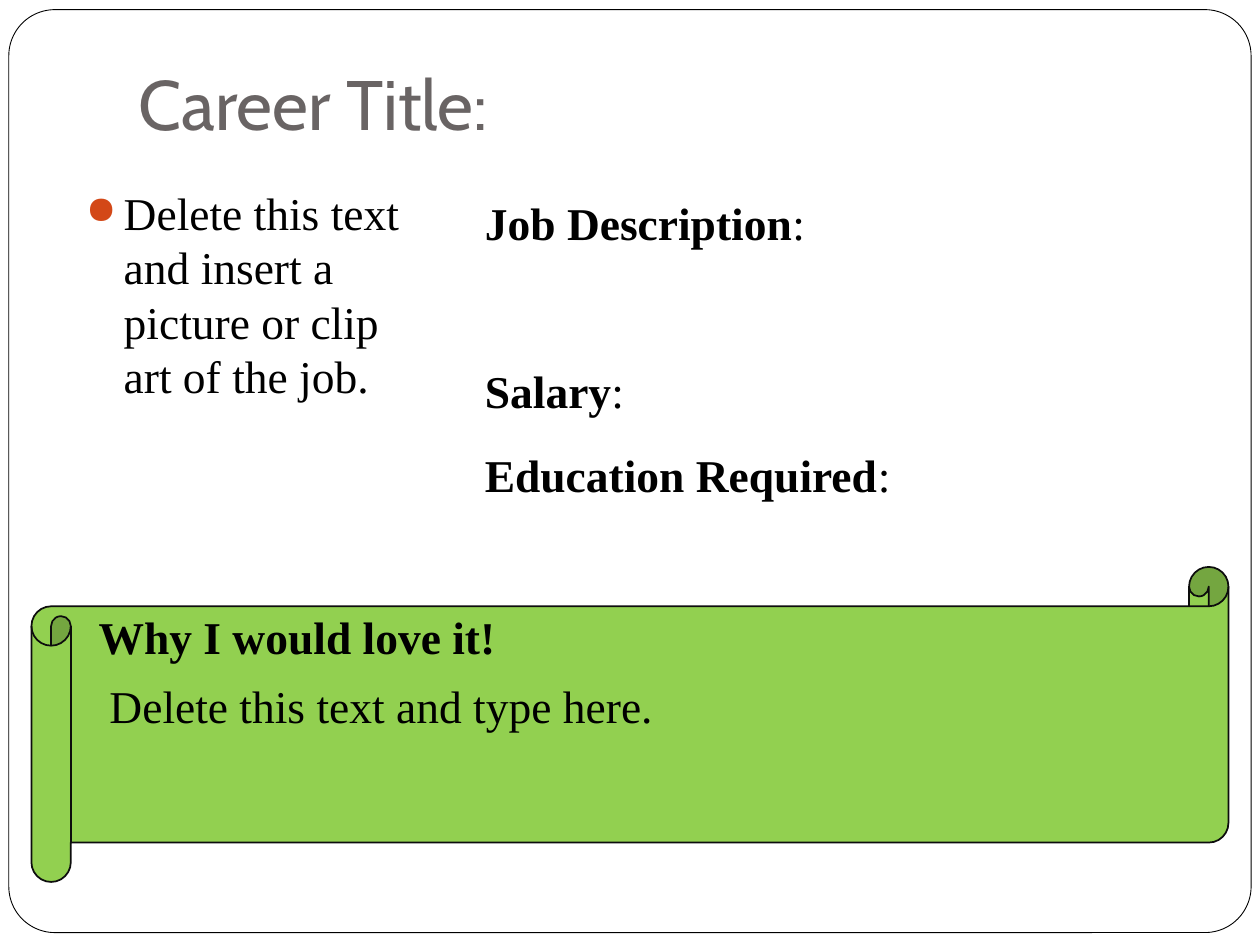
from dataclasses import dataclass
from lxml.etree import SubElement
from pptx import Presentation
from pptx.dml.color import RGBColor as Rgb
from pptx.enum.shapes import MSO_SHAPE as Kind
from pptx.enum.text import MSO_ANCHOR as Anchor, PP_ALIGN as Align
from pptx.oxml.ns import qn
from pptx.util import Inches, Pt


@dataclass(frozen=True)
class Theme:
    ink: str = "000000"
    edge: str = "0D0D0D"
    paper: str = "FFFFFF"
    green: str = "92D050"
    gray: str = "696464"
    dot: str = "D34817"
    head: str = "Cabin"
    body: str = "Times New Roman"
    big: int = 40
    mid: int = 26


def apply(item, vals):
    for name, val in vals.items():
        setattr(item, name, val)


class Page:
    cols, rows = 120, 90

    def __init__(self, deck, theme):
        self.theme = theme
        self.wide, self.high = deck.slide_width, deck.slide_height
        self.slide = deck.slides.add_slide(deck.slide_layouts[5])
        self.shapes = self.slide.shapes

    def box(self, col, row, wide, high):
        x, y = self.wide / self.cols, self.high / self.rows
        return [round(n) for n in (col * x, row * y, wide * x, high * y)]

    def add_run(self, para, text, **form):
        run = para.add_run()
        run.text = text
        color = form.pop("color", self.theme.ink)
        base = {"name": self.theme.body, "size": Pt(self.theme.mid), "bold": False}
        apply(run.font, base | form)
        run.font.color.rgb = Rgb.from_string(color)

    def title(self, text, place):
        item = self.shapes.title
        apply(item, dict(zip(("left", "top", "width", "height"), self.box(*place))))
        frame = item.text_frame
        apply(frame, {"vertical_anchor": Anchor.BOTTOM, "word_wrap": True,
                      "margin_bottom": Inches(0.1)})
        para = frame.paragraphs[0]
        para.alignment = Align.LEFT
        self.add_run(para, text, name=self.theme.head, size=Pt(self.theme.big),
                     color=self.theme.gray)

    def shape(self, kind, place, fill, line=None, width=1, group=None):
        host = group.shapes if group else self.shapes
        item = host.add_shape(kind, *self.box(*place))
        item.shadow.inherit = False
        item.fill.solid()
        item.fill.fore_color.rgb = Rgb.from_string(fill)
        if line:
            item.line.color.rgb = Rgb.from_string(line)
            item.line.width = Pt(width)
        else:
            item.line.fill.background()
        return item

    def frame(self, place, round_by):
        item = self.shape(Kind.ROUNDED_RECTANGLE, place, self.theme.paper,
                          self.theme.ink, 0.5)
        item.adjustments[0] = round_by
        self.shapes._spTree.insert(2, item._element)

    def fill_text(self, item, parts, dot=False, gap=None):
        frame = item.text_frame
        apply(frame, {"word_wrap": True, "vertical_anchor": Anchor.TOP})
        para = frame.paragraphs[0]
        apply(para, {"alignment": Align.LEFT, "space_before": Pt(5.8),
                     "line_spacing": gap})
        props = para._p.get_or_add_pPr()
        indent = Inches(0.3)
        props.set("marL", str(indent))
        props.set("indent", str(-indent))
        if dot:
            tint = SubElement(props, qn("a:buClr"))
            SubElement(tint, qn("a:srgbClr"), val=self.theme.dot)
            SubElement(props, qn("a:buSzPct"), val="85000")
            SubElement(props, qn("a:buChar"), char="●")
        else:
            SubElement(props, qn("a:buNone"))
        for text, bold in parts:
            self.add_run(para, text, bold=bold)

    def text(self, parts, place, dot=False):
        self.fill_text(self.shapes.add_textbox(*self.box(*place)), parts, dot)

    def scroll(self, place, notes):
        group = self.shapes.add_group_shape()
        green = self.theme.green
        self.shape(Kind.HORIZONTAL_SCROLL, place, green, self.theme.edge, group=group)
        for text, bold, spot, gap in notes:
            item = self.shape(Kind.RECTANGLE, spot, green, group=group)
            self.fill_text(item, [(text, bold)], gap=gap)


def main():
    deck = Presentation()
    apply(deck, {"slide_width": Inches(10), "slide_height": Inches(7.5)})
    page = Page(deck, Theme())
    page.frame((0.84, 0.92, 118.32, 87.9), 0.05)
    page.title("Career Title:", (12, 0, 102, 15))
    page.text([("Delete this text and insert a picture or clip art of the job.", False)],
              (7, 17, 33, 39), dot=True)
    row = 18
    for label, high in (("Job Description", 16), ("Salary", 8), ("Education Required", 8)):
        page.text([(label, True), (":", False)], (45, row, 66, high))
        row += high
    page.scroll((3, 54, 114, 30), [
        ("Why I would love it!", True, (8.2, 58, 47.6, 6), 0.9),
        ("Delete this text and type here.", False, (9.25, 64, 104.6, 16), None),
    ])
    deck.save("out.pptx")


if __name__ == "__main__":
    main()
